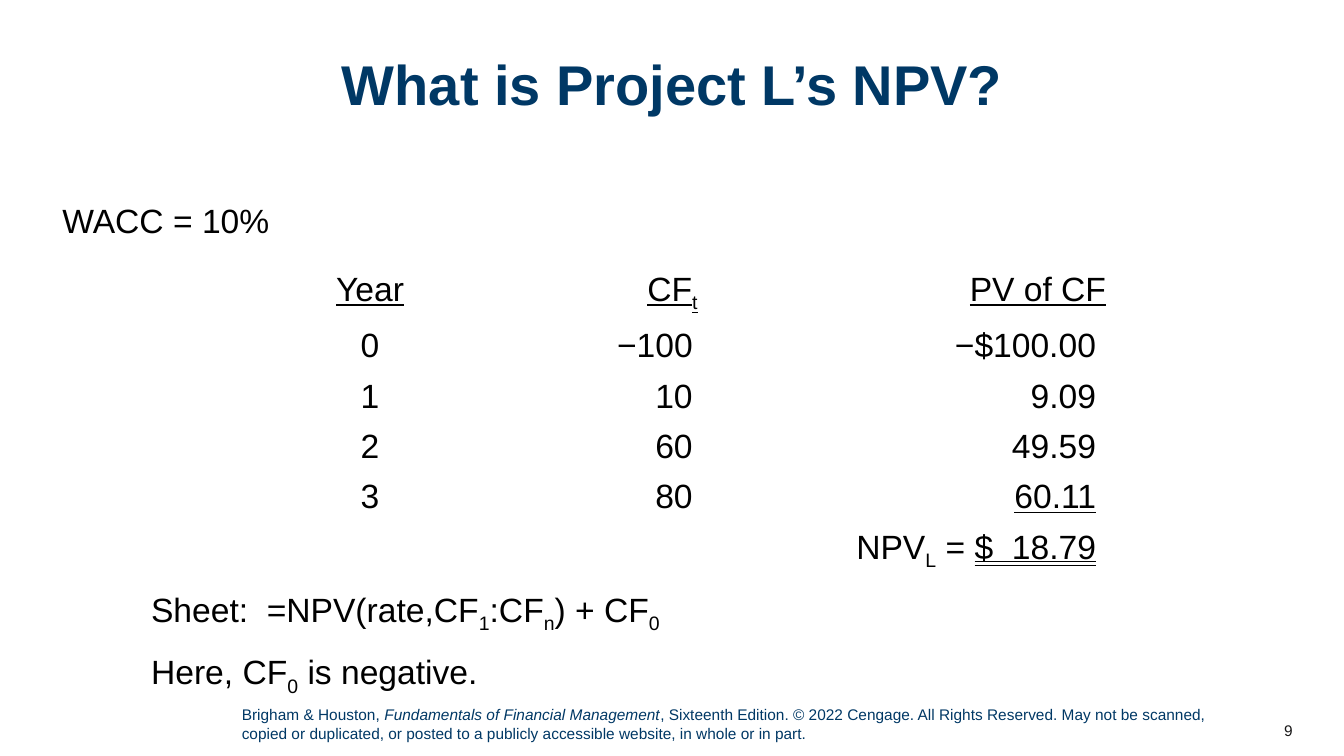
from dataclasses import dataclass

import pptx
import pptx.dml.color
import pptx.enum.text
import pptx.oxml.ns
import pptx.util
from pptx.util import Inches

RGBColor = pptx.dml.color.RGBColor
Align = pptx.enum.text.PP_ALIGN
Anchor = pptx.enum.text.MSO_ANCHOR
Underline = pptx.enum.text.MSO_UNDERLINE

NAVY = RGBColor(0x00, 0x38, 0x65)
BLACK = RGBColor(0x00, 0x00, 0x00)
DARK_GREY = RGBColor(0x18, 0x17, 0x17)
FONT = "Arial"
NO_STYLE_NO_GRID = "{2D5ABB26-0587-4C30-8999-92F81FD0307C}"


@dataclass(frozen=True)
class Span:
    text: str
    sub: bool = False
    underline: Underline = Underline.NONE
    italic: bool = False


@dataclass(frozen=True)
class Column:
    width: float
    align: Align
    right_inset: float
    header: tuple[Span, ...]
    header_align: Align
    header_inset: float
    values: tuple[tuple[Span, ...], ...]


def under(text: str, sub: bool = False) -> Span:
    return Span(text, sub, Underline.SINGLE_LINE)


def plain(*texts: str) -> tuple[tuple[Span, ...], ...]:
    return tuple((Span(text),) for text in texts)


COLUMNS = (
    Column(3, Align.CENTER, 0.01, (under("Year"),), Align.CENTER, 0.01,
           plain("0", "1", "2", "3")),
    Column(3, Align.RIGHT, 1.3, (under("CF"), under("t", True)), Align.CENTER, 0.01,
           plain("−100", "10", "60", "80")),
    Column(3.1, Align.RIGHT, 0.4, (under("PV of CF"),), Align.RIGHT, 0.3,
           plain("−$100.00", "9.09", "49.59") + (
               (under("60.11"),),
               (Span("NPV"), Span("L", True), Span(" = "),
                Span("$  18.79", underline=Underline.DOUBLE_LINE)))),
)
ROW_COUNT = 6
ROW_HEIGHT = 0.48

WACC = plain("WACC = 10%")
FORMULA_NOTE = (
    (Span("Sheet:  =NPV(rate,CF"), Span("1", True), Span(":CF"), Span("n", True),
     Span(") + CF"), Span("0", True)),
    (Span("Here, CF"), Span("0", True), Span(" is negative.")),
)
CREDIT = ((
    Span("Brigham & Houston, "),
    Span("Fundamentals of Financial Management", italic=True),
    Span(", Sixteenth Edition. © 2022 Cengage. All Rights Reserved. May not be scanned, "
         "copied or duplicated, or posted to a publicly accessible website, in whole or in part."),
),)


def add_spans(p, spans: tuple[Span, ...], size: float = 24, color: RGBColor = BLACK) -> None:
    for span in spans:
        r = p.add_run()
        r.text = span.text
        r.font.name = FONT
        r.font.size = pptx.util.Pt(size)
        r.font.color.rgb = color
        r.font.italic = span.italic
        r.font.underline = span.underline
        if span.sub:
            r.font._element.set("baseline", "-25000")


def add_text(s, at: tuple[float, float, float, float], paragraphs, size: float = 24,
             color: RGBColor = BLACK, align: Align = Align.LEFT,
             anchor: Anchor = Anchor.TOP, gap: float = 0) -> None:
    """Add a text box; gap is the points between paragraphs."""
    tf = s.shapes.add_textbox(*map(Inches, at)).text_frame
    tf.word_wrap = True
    tf.vertical_anchor = anchor
    for i, spans in enumerate(paragraphs):
        p = tf.paragraphs[0] if i == 0 else tf.add_paragraph()
        p.alignment = align
        p.space_before = pptx.util.Pt(gap if i else 0)
        add_spans(p, spans, size, color)


def set_title(s, text: str) -> None:
    title = s.shapes.title
    title.left, title.top, title.width, title.height = map(Inches, (0.52, 0.52, 12.29, 1.33))
    tf = title.text_frame
    tf.auto_size = pptx.enum.text.MSO_AUTO_SIZE.NONE
    tf.vertical_anchor = Anchor.TOP
    p = tf.paragraphs[0]
    p.alignment = Align.CENTER
    p.line_spacing = 0.9
    add_spans(p, (Span(text),), 40, NAVY)
    p.runs[0].font.bold = True


def add_cash_flows(s) -> None:
    width = sum(column.width for column in COLUMNS)
    table = s.shapes.add_table(ROW_COUNT, len(COLUMNS), Inches(2.17), Inches(2.64),
                               Inches(width), Inches(ROW_COUNT * ROW_HEIGHT)).table
    table.first_row = False
    table.horz_banding = False
    style_id = table._tbl.tblPr.find(pptx.oxml.ns.qn("a:tableStyleId"))
    style_id.text = NO_STYLE_NO_GRID
    for row in table.rows:
        row.height = Inches(ROW_HEIGHT)
    for c, column in enumerate(COLUMNS):
        table.columns[c].width = Inches(column.width)
        contents = (column.header,) + column.values
        for r in range(ROW_COUNT):
            cell = table.cell(r, c)
            cell.fill.background()
            cell.margin_left = Inches(0.01)
            cell.margin_right = Inches(column.right_inset if r else column.header_inset)
            p = cell.text_frame.paragraphs[0]
            p.alignment = column.align if r else column.header_align
            if r < len(contents):
                add_spans(p, contents[r])


def main() -> None:
    prs = pptx.Presentation()
    prs.slide_width, prs.slide_height = Inches(13.33), Inches(7.5)
    s = prs.slides.add_slide(prs.slide_layouts.get_by_name("Title Only"))
    set_title(s, "What is Project L’s NPV?")
    add_text(s, (0.52, 1.93, 12.11, 0.6), WACC)
    add_cash_flows(s)
    add_text(s, (1.4, 5.79, 10.03, 1.11), FORMULA_NOTE, gap=12)
    add_text(s, (2.3, 6.95, 9.8, 0.47), CREDIT, 11, NAVY)
    add_text(s, (12.12, 7.05, 0.8, 0.4), plain("9"), 11, DARK_GREY, Align.RIGHT, Anchor.MIDDLE)
    prs.save("out.pptx")


if __name__ == "__main__":
    main()
